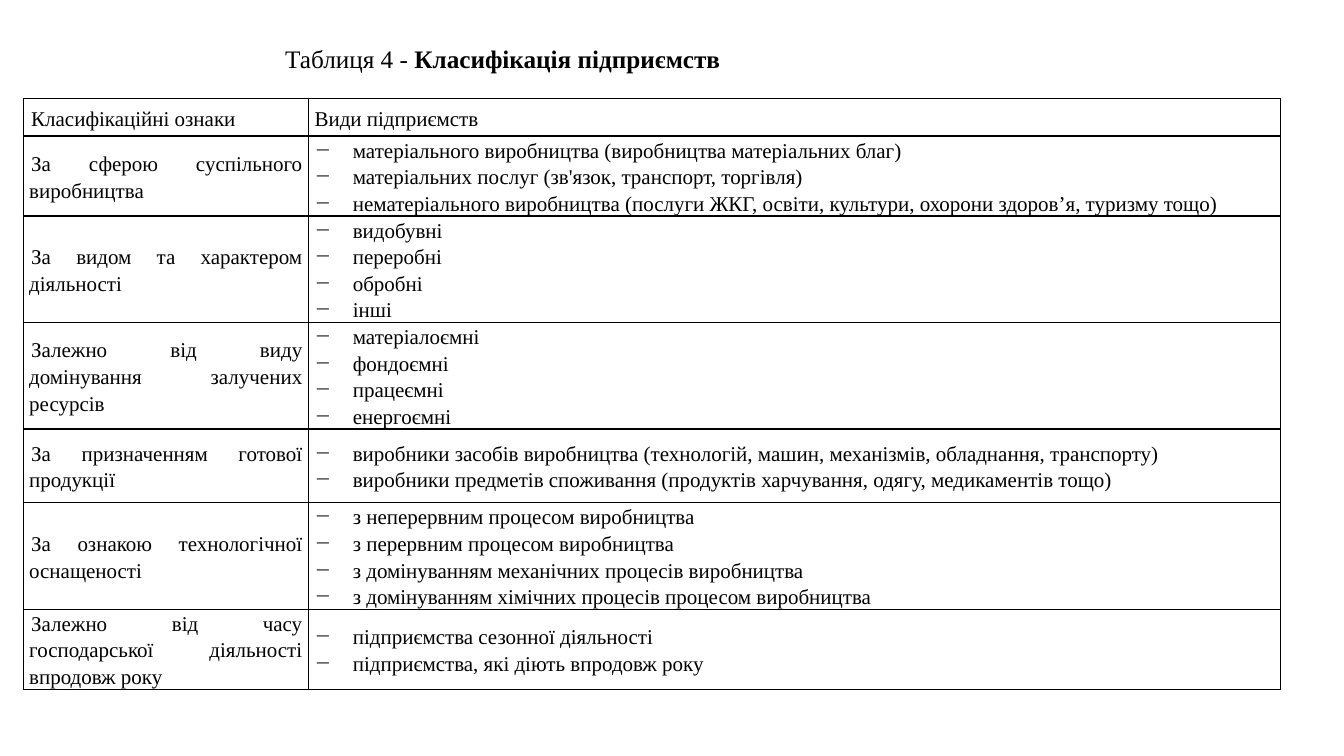
from lxml.etree import SubElement
from pptx import Presentation
from pptx.dml.color import RGBColor
from pptx.enum.text import MSO_ANCHOR, MSO_AUTO_SIZE, PP_ALIGN
from pptx.oxml.ns import qn
from pptx.util import Inches, Pt

BLACK = RGBColor(0x00, 0x00, 0x00)
FONT = "Times New Roman"
HEADER = ("Класифікаційні ознаки", "Види підприємств")
CLASSIFICATION = [
    ("За сферою суспільного виробництва", [
        "матеріального виробництва (виробництва матеріальних благ)",
        "матеріальних послуг (зв'язок, транспорт, торгівля)",
        "нематеріального виробництва (послуги ЖКГ, освіти, культури, "
        "охорони здоров’я, туризму тощо)",
    ]),
    ("За видом та характером діяльності", [
        "видобувні", "переробні", "обробні", "інші",
    ]),
    ("Залежно від виду домінування залучених ресурсів", [
        "матеріалоємні", "фондоємні", "працеємні", "енергоємні",
    ]),
    ("За призначенням готової продукції", [
        "виробники засобів виробництва (технологій, машин, механізмів, "
        "обладнання, транспорту)",
        "виробники предметів споживання (продуктів харчування, одягу, "
        "медикаментів тощо)",
    ]),
    ("За ознакою технологічної оснащеності", [
        "з неперервним процесом виробництва",
        "з перервним процесом виробництва",
        "з домінуванням механічних процесів виробництва",
        "з домінуванням хімічних процесів процесом виробництва",
    ]),
    ("Залежно від часу господарської діяльності впродовж року", [
        "підприємства сезонної діяльності",
        "підприємства, які діють впродовж року",
    ]),
]


def add_run(p, text, size, bold=False):
    r = p.add_run()
    r.text = text
    r.font.name = FONT
    r.font.size = Pt(size)
    r.font.bold = bold
    r.font.color.rgb = BLACK


def set_indent(p, left, first):
    pPr = p._p.get_or_add_pPr()
    pPr.set("marL", str(Inches(left)))
    pPr.set("indent", str(Inches(first)))


def set_borders(cell):
    tcPr = cell._tc.get_or_add_tcPr()
    for side in ("lnL", "lnR", "lnT", "lnB"):
        ln = SubElement(tcPr, qn(f"a:{side}"), w=str(Pt(1)))
        fill = SubElement(ln, qn("a:solidFill"))
        SubElement(fill, qn("a:srgbClr"), val=str(BLACK))


def fill_cell(cell, lines, left=0, first=0, bullet=None):
    set_borders(cell)
    cell.fill.background()
    cell.vertical_anchor = MSO_ANCHOR.MIDDLE
    cell.margin_left = cell.margin_right = Inches(0.06)
    cell.margin_top = cell.margin_bottom = 0
    tf = cell.text_frame
    for i, line in enumerate(lines):
        p = tf.add_paragraph() if i else tf.paragraphs[0]
        p.alignment = PP_ALIGN.JUSTIFY
        p.line_spacing = 1.15
        set_indent(p, left, first)
        if bullet:
            SubElement(p._p.get_or_add_pPr(), qn("a:buChar"), char=bullet)
        add_run(p, line, 15)


def add_title(slide):
    box = slide.shapes.add_textbox(Inches(2.43), Inches(0.38), Inches(5.49), Inches(0.4))
    tf = box.text_frame
    tf.word_wrap = True
    tf.auto_size = MSO_AUTO_SIZE.SHAPE_TO_FIT_TEXT
    tf.vertical_anchor = MSO_ANCHOR.MIDDLE
    p = tf.paragraphs[0]
    p.alignment = PP_ALIGN.JUSTIFY
    set_indent(p, 0, 0.3)
    add_run(p, "Таблиця 4 - ", 18)
    add_run(p, "Класифікація підприємств", 18, bold=True)


def add_classification_table(slide):
    header_height, row_height = Inches(0.37), Inches(0.73)
    table = slide.shapes.add_table(
        len(CLASSIFICATION) + 1, 2, Inches(0.23), Inches(0.98), Inches(12.47),
        header_height + row_height * len(CLASSIFICATION)).table
    table.first_row = table.horz_banding = False
    table.columns[0].width = Inches(2.83)
    table.columns[1].width = Inches(9.64)
    table.rows[0].height = header_height
    fill_cell(table.cell(0, 0), HEADER[:1], first=0.02)
    fill_cell(table.cell(0, 1), HEADER[1:])
    for row, (criterion, kinds) in enumerate(CLASSIFICATION, start=1):
        table.rows[row].height = row_height
        fill_cell(table.cell(row, 0), [criterion], first=0.02)
        fill_cell(table.cell(row, 1), kinds, left=0.38, first=-0.38, bullet="−")


def main():
    prs = Presentation()
    prs.slide_width = Inches(13.33)
    prs.slide_height = Inches(7.5)
    slide = prs.slides.add_slide(prs.slide_layouts[6])
    add_classification_table(slide)
    add_title(slide)
    prs.save("out.pptx")


if __name__ == "__main__":
    main()
